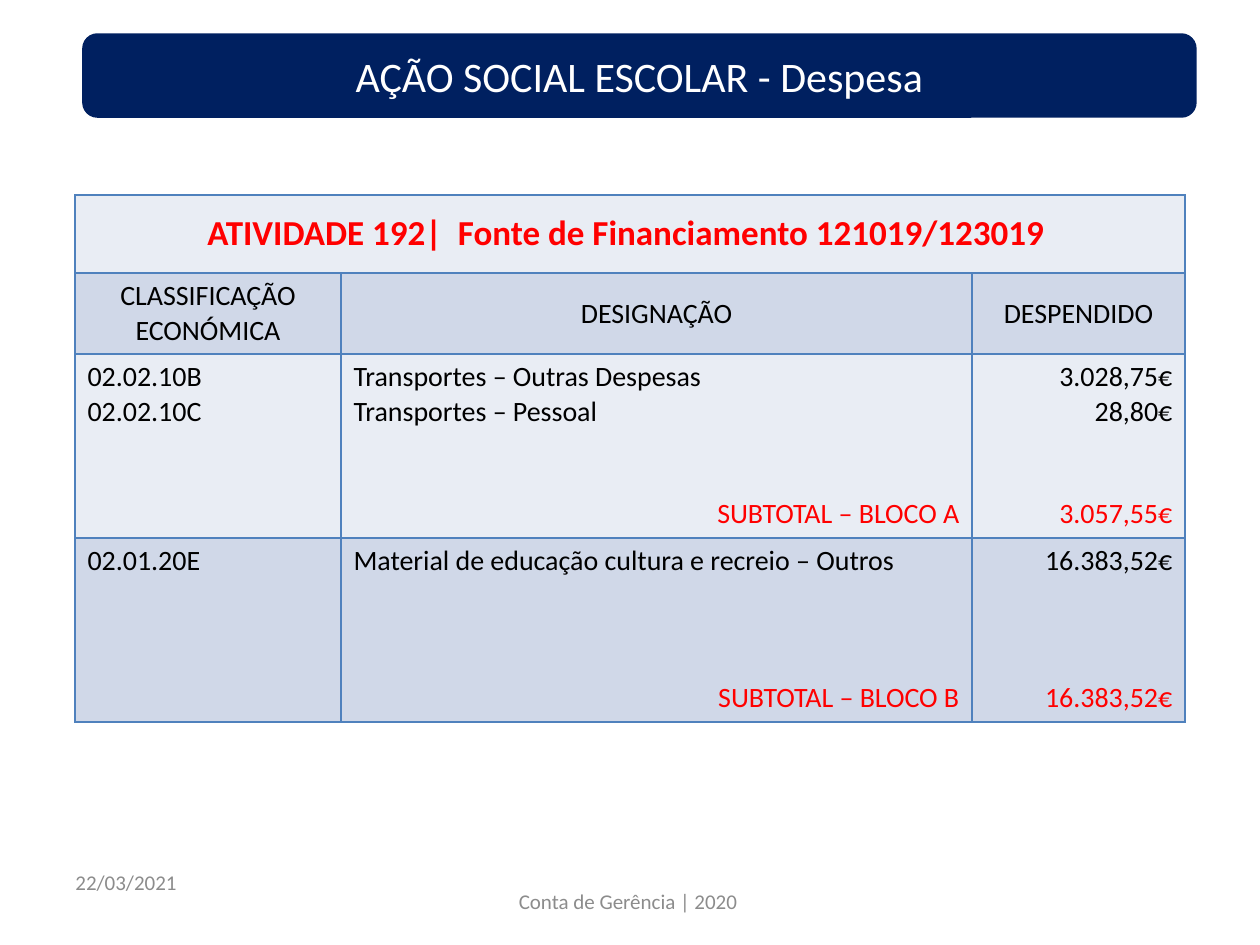
from dataclasses import dataclass
from typing import Any

from lxml import etree
from pptx import Presentation
from pptx.dml.color import RGBColor
from pptx.enum.shapes import MSO_SHAPE
from pptx.enum.text import MSO_ANCHOR, PP_ALIGN
from pptx.oxml.ns import qn
from pptx.util import Emu, Pt

LEFT, CENTER, RIGHT = PP_ALIGN.LEFT, PP_ALIGN.CENTER, PP_ALIGN.RIGHT
TOP, MIDDLE = MSO_ANCHOR.TOP, MSO_ANCHOR.MIDDLE
ROUNDED = MSO_SHAPE.ROUNDED_RECTANGLE
EMU_PER_PX = 914400 / 126
FONT = "Calibri"
NAVY, WHITE, BLACK, RED, GRAY = "002060", "FFFFFF", "000000", "FF0000", "8C8C8C"
BORDER, LIGHT, DARK = "4F81BD", "E9EDF4", "D0D8E8"
LINE_POINTS = 19.5


@dataclass
class Line:
    text: str
    align: Any = LEFT
    color: str = BLACK
    size: int = 16
    bold: bool = False
    gap_lines: int = 0


@dataclass
class Footer:
    left: int
    top: int
    width: int
    line: Line


@dataclass
class Row:
    height: int
    fill: str
    anchor: Any
    cells: list[list[Line]]


def px(length: int) -> Emu:
    return Emu(round(length * EMU_PER_PX))


def rgb(color: str) -> RGBColor:
    return RGBColor.from_string(color)


def apply(target: Any, values: dict[str, Any]) -> None:
    for name, value in values.items():
        setattr(target, name, value)


def write_lines(frame: Any, lines: list[Line]) -> None:
    for index, line in enumerate(lines):
        para = frame.paragraphs[0] if index == 0 else frame.add_paragraph()
        apply(para, {"alignment": line.align, "space_before": Pt(line.gap_lines * LINE_POINTS)})
        span = para.add_run()
        span.text = line.text
        apply(span.font, {"name": FONT, "size": Pt(line.size), "bold": line.bold})
        span.font.color.rgb = rgb(line.color)


def draw_banner(page: Any, line: Line) -> None:
    banner = page.shapes.add_shape(ROUNDED, px(84), px(35), px(1111), px(81))
    banner.shadow.inherit = False
    banner.fill.solid()
    banner.fill.fore_color.rgb = rgb(NAVY)
    banner.line.color.rgb = rgb(NAVY)
    banner.line.width = Pt(2)
    apply(banner.text_frame, {"word_wrap": True, "vertical_anchor": MIDDLE})
    write_lines(banner.text_frame, [line])


def draw_footer(page: Any, footer: Footer) -> None:
    box = page.shapes.add_textbox(px(footer.left), px(footer.top), px(footer.width), px(50))
    apply(box.text_frame, {"word_wrap": True, "vertical_anchor": MIDDLE})
    write_lines(box.text_frame, [footer.line])


def style_cell(cell: Any, row: Row) -> None:
    properties = cell._tc.get_or_add_tcPr()
    for side in ("a:lnL", "a:lnR", "a:lnT", "a:lnB"):
        edge = etree.SubElement(properties, qn(side), w=str(Pt(1)))
        paint = etree.SubElement(edge, qn("a:solidFill"))
        etree.SubElement(paint, qn("a:srgbClr"), val=BORDER)
    cell.fill.solid()
    cell.fill.fore_color.rgb = rgb(row.fill)
    cell.vertical_anchor = row.anchor


def draw_table(page: Any, widths: list[int], rows: list[Row]) -> None:
    height = sum(row.height for row in rows)
    frame = page.shapes.add_table(
        len(rows), len(widths), px(75), px(195), px(sum(widths)), px(height)
    )
    table = frame.table
    apply(table, {"first_row": False, "horz_banding": False})
    for column, width in zip(table.columns, widths):
        column.width = px(width)
    for row_index, row in enumerate(rows):
        table.rows[row_index].height = px(row.height)
        for column_index in range(len(widths)):
            style_cell(table.cell(row_index, column_index), row)
        for column_index, lines in enumerate(row.cells):
            write_lines(table.cell(row_index, column_index).text_frame, lines)
    table.cell(0, 0).merge(table.cell(0, len(widths) - 1))


def expense_row(fill: str, entries: list[tuple[str, str, str]], block: str, subtotal: str) -> Row:
    codes, names, amounts = zip(*entries)
    gap = 4 - len(entries)
    return Row(184, fill, TOP, [
        [Line(code) for code in codes],
        [Line(name) for name in names]
        + [Line(f"SUBTOTAL – BLOCO {block}", RIGHT, RED, gap_lines=gap)],
        [Line(amount, RIGHT) for amount in amounts]
        + [Line(subtotal, RIGHT, RED, gap_lines=gap)],
    ])


ROWS = [
    Row(78, LIGHT, MIDDLE, [[
        Line("ATIVIDADE 192|  Fonte de Financiamento 121019/123019 ", CENTER, RED, 20, True)
    ]]),
    Row(81, DARK, MIDDLE, [
        [Line(text, CENTER) for text in texts]
        for texts in (["CLASSIFICAÇÃO", "ECONÓMICA"], ["DESIGNAÇÃO"], ["DESPENDIDO"])
    ]),
    expense_row(LIGHT, [
        ("02.02.10B", "Transportes – Outras Despesas", "3.028,75€"),
        ("02.02.10C", "Transportes – Pessoal", "28,80€"),
    ], "A", "3.057,55€"),
    expense_row(DARK, [
        ("02.01.20E", "Material de educação cultura e recreio – Outros", "16.383,52€"),
    ], "B", "16.383,52€"),
]

FOOTERS = [
    Footer(63, 857, 294, Line("22/03/2021", LEFT, GRAY, 12)),
    Footer(431, 876, 399, Line("Conta de Gerência | 2020 ", CENTER, GRAY, 12)),
]


def main() -> None:
    deck = Presentation()
    apply(deck, {"slide_width": px(1260), "slide_height": px(945)})
    page = deck.slides.add_slide(deck.slide_layouts[6])
    for footer in FOOTERS:
        draw_footer(page, footer)
    draw_banner(page, Line("AÇÃO SOCIAL ESCOLAR - Despesa", CENTER, WHITE, 24))
    draw_table(page, [266, 631, 213], ROWS)
    deck.save("out.pptx")


if __name__ == "__main__":
    main()
